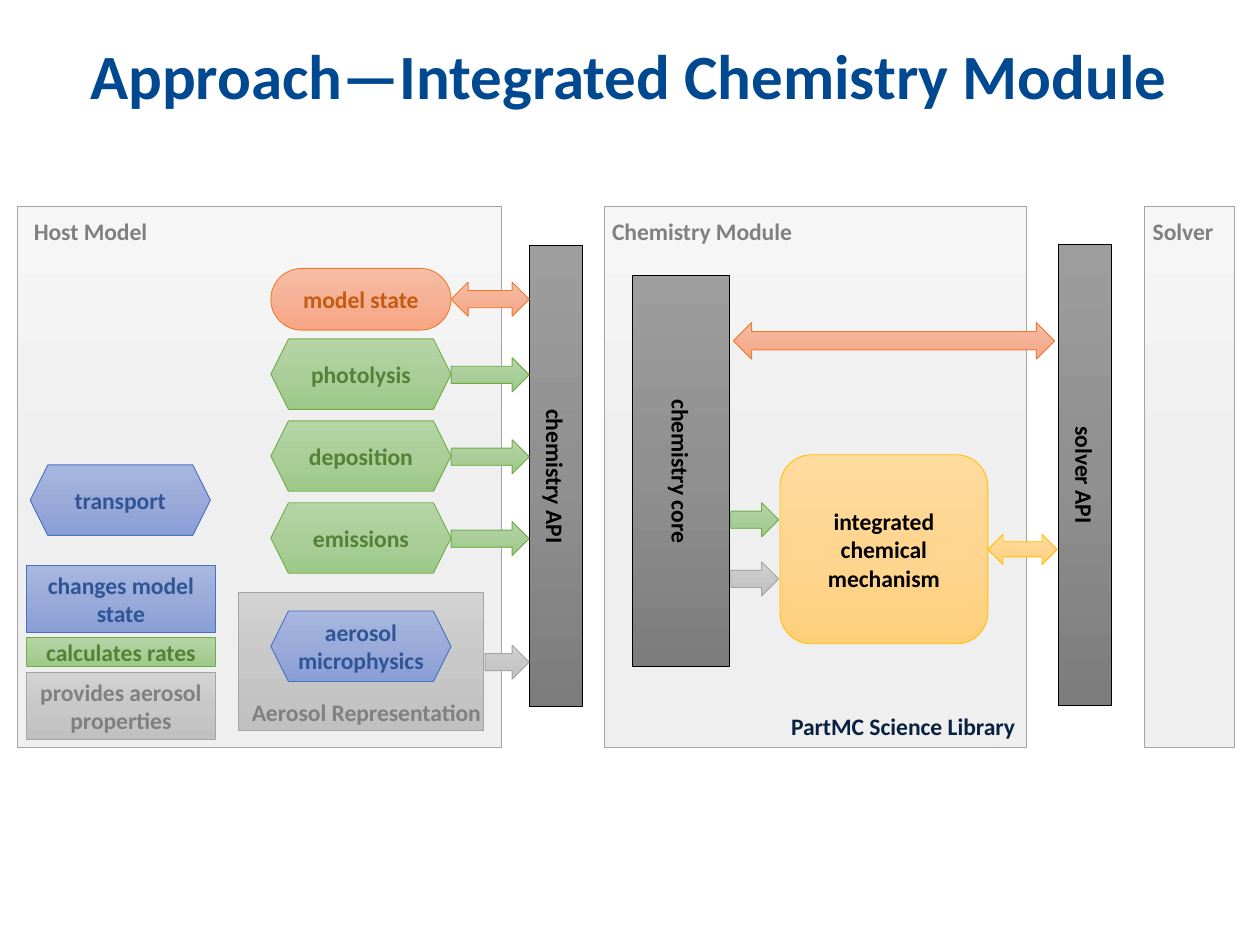
from copy import deepcopy
from pptx import Presentation
from pptx.dml.color import RGBColor as Rgb
from pptx.enum.shapes import MSO_SHAPE as Geo
from pptx.enum.text import MSO_ANCHOR as Anchor, PP_ALIGN as Align
from pptx.oxml.ns import qn
from pptx.util import Inches, Pt

COLORS = {
    "title": "004890", "label": "808080", "navy": "092242",
    "panel": "F6F6F6 EFEFEF ECECEC A5A5A5 808080",
    "gray": "D2D2D2 C8C8C8 C0C0C0 A5A5A5 808080",
    "blue": "A8B7DF 9AABD9 889ED7 4472C4 2F5597",
    "green": "B5D5A7 AACE9A 9CC987 70AD47 548235",
    "orange": "F7BDA5 F5B196 F8A582 ED7D31 C55A11",
    "yellow": "FFDB9E FFD590 FFD07C FFC000 000000",
    "dark": "9D9D9D 909090 7C7C7C 000000 000000",
}

deck = Presentation()
deck.slide_width, deck.slide_height = Inches(10), Inches(7.5)
slide = deck.slides.add_slide(deck.slide_layouts[6])
COL, ROW = deck.slide_width / 100, deck.slide_height / 75


def write(frame, text, color, size=13.5, align=Align.CENTER):
    frame.text = text
    for para in frame.paragraphs:
        para.alignment = align
        font = para.font
        font.name, font.size, font.bold = "Calibri", Pt(size), True
        font.color.rgb = Rgb.from_string(color)


def draw(geo, tone, x, y, w, h, text=""):
    shape = slide.shapes.add_shape(
        geo, round(x * COL), round(y * ROW), round(w * COL), round(h * ROW))
    *shades, edge, ink = COLORS[tone].split()
    shape.shadow.inherit = False
    shape.fill.gradient()
    shape.fill.gradient_angle = 270
    stops = shape._element.spPr.find(".//" + qn("a:gsLst"))
    stops.insert(1, deepcopy(stops[0]))
    for stop, shade, pos in zip(shape.fill.gradient_stops, shades, (0, 0.5, 1)):
        stop.color.rgb, stop.position = Rgb.from_string(shade), pos
    shape.line.color.rgb, shape.line.width = Rgb.from_string(edge), Pt(0.5)
    if text:
        frame = shape.text_frame
        frame.word_wrap = geo != Geo.HEXAGON
        frame.vertical_anchor = Anchor.MIDDLE
        write(frame, text, ink)
    return shape


for x, w in ((1.4, 38.4), (48, 33.5), (90.8, 7.2)):
    draw(Geo.RECTANGLE, "panel", x, 16.4, w, 42.9)
draw(Geo.RECTANGLE, "gray", 18.9, 47, 19.5, 11)

for x, y, w, text, tone in (
    (1.7, 16.7, 14.6, "Host Model", "label"),
    (47.6, 16.7, 19.7, "Chemistry Module", "label"),
    (90.5, 16.7, 7.5, "Solver", "label"),
    (19, 54.9, 24.6, "Aerosol Representation", "label"),
    (61.8, 56, 24.4, "PartMC Science Library", "navy"),
):
    box = slide.shapes.add_textbox(
        round(x * COL), round(y * ROW), round(w * COL), round(3.3 * ROW))
    box.text_frame.word_wrap = True
    write(box.text_frame, text, COLORS[tone], align=Align.LEFT)

title = slide.shapes.add_textbox(
    round(3.8 * COL), round(1.7 * ROW), round(92.2 * COL), round(9.2 * ROW))
title.text_frame.word_wrap = True
title.text_frame.vertical_anchor = Anchor.MIDDLE
write(title.text_frame, "Approach—Integrated Chemistry Module", COLORS["title"], 36)
title.text_frame.paragraphs[0].line_spacing = 0.9

for x, y, w, h, text in (
    (42, 19.5, 4.2, 36.6, "chemistry API"),
    (50.2, 21.9, 7.7, 31, "chemistry core"),
    (84, 19.4, 4.2, 36.6, "solver API"),
):
    bar = draw(Geo.RECTANGLE, "dark", x, y, w, h, text)
    bar.text_frame._txBody.bodyPr.set("vert", "vert")

for y, h, tone, text in (
    (44.9, 5.3, "blue", "changes model state"),
    (50.6, 2.3, "green", "calculates rates"),
    (53.4, 5.3, "gray", "provides aerosol\nproperties"),
):
    draw(Geo.RECTANGLE, tone, 2.1, y, 15, h, text)

for row, text in enumerate(("photolysis", "deposition", "emissions")):
    y = 26.9 + 6.5 * row
    draw(Geo.HEXAGON, "green", 21.5, y, 14.3, 5.6, text)
    draw(Geo.RIGHT_ARROW, "green", 35.8, y + 1.5, 6.2, 2.7)
draw(Geo.HEXAGON, "blue", 21.5, 48.5, 14.3, 5.6, "aerosol\nmicrophysics")
draw(Geo.HEXAGON, "blue", 2.4, 36.9, 14.3, 5.6, "transport")

state = draw(Geo.ROUNDED_RECTANGLE, "orange", 21.5, 21.3, 14.3, 4.9, "model state")
state.adjustments[0] = 0.5
draw(Geo.ROUNDED_RECTANGLE, "yellow", 61.9, 36.1, 16.5, 15,
     "integrated\nchemical\nmechanism")

for geo, tone, x, y, w, h in (
    (Geo.LEFT_RIGHT_ARROW, "orange", 35.8, 22.4, 6.2, 2.7),
    (Geo.LEFT_RIGHT_ARROW, "orange", 58.2, 25.6, 25.5, 2.9),
    (Geo.LEFT_RIGHT_ARROW, "yellow", 78.4, 42.4, 5.5, 2.4),
    (Geo.RIGHT_ARROW, "gray", 38.5, 51.2, 3.5, 2.7),
    (Geo.RIGHT_ARROW, "green", 58, 39.9, 3.8, 2.7),
    (Geo.RIGHT_ARROW, "gray", 58, 44.6, 3.8, 2.7),
):
    draw(geo, tone, x, y, w, h)

deck.save("out.pptx")
